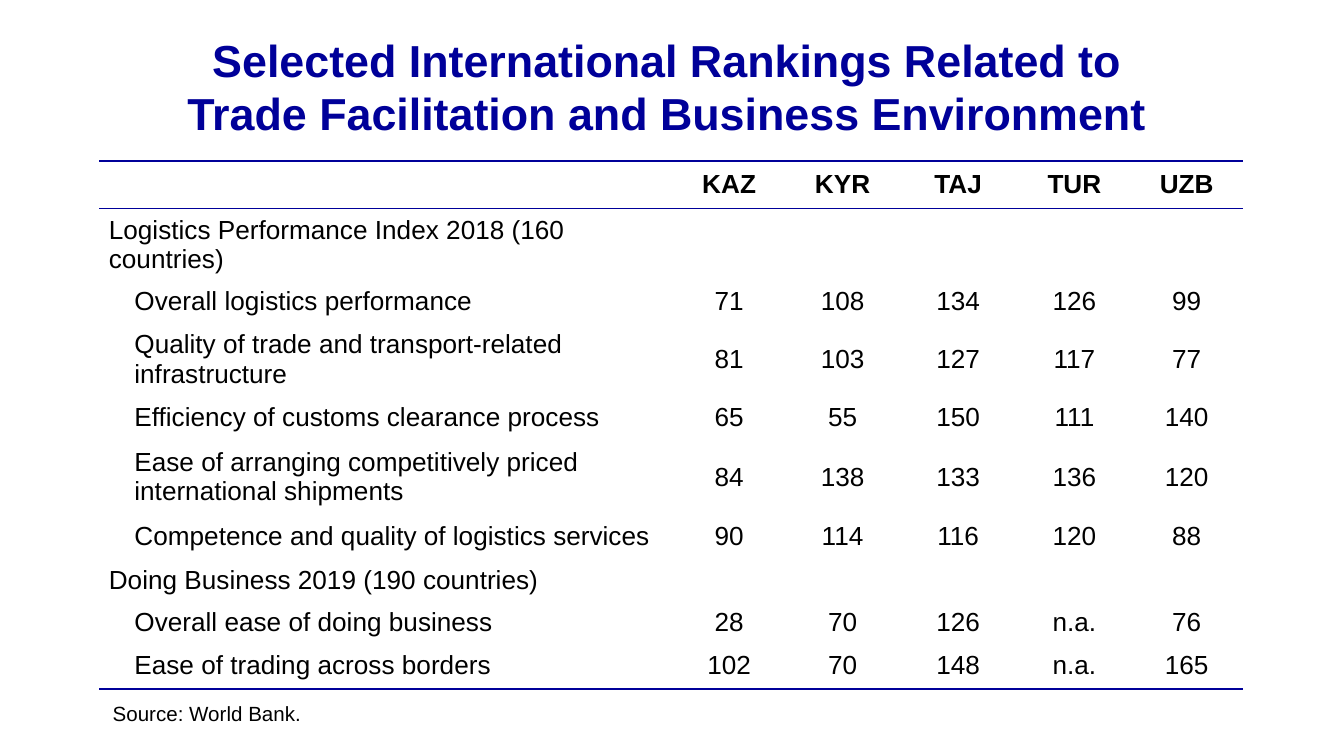
"""Build a slide with a table of international trade and business rankings."""
from lxml import etree
from pptx import Presentation
from pptx.dml.color import RGBColor
from pptx.enum.text import MSO_ANCHOR, PP_ALIGN
from pptx.oxml.ns import qn
from pptx.util import Inches, Pt

LEFT, CENTER = PP_ALIGN.LEFT, PP_ALIGN.CENTER
MIDDLE = MSO_ANCHOR.MIDDLE
NAVY = RGBColor(0x00, 0x00, 0x99)
BLACK = RGBColor(0x00, 0x00, 0x00)
NO_GRID_STYLE = "{2D5ABB26-0587-4C30-8999-92F81FD0307C}"

TITLE_FORMAT = {"name": "Arial", "size": Pt(24), "bold": True}
HEADER_FORMAT = {"name": "Arial", "size": Pt(14), "bold": True}
BODY_FORMAT = {"name": "Arial", "size": Pt(14), "bold": False}
SOURCE_FORMAT = {"name": "Arial", "size": Pt(11), "bold": False}
CELL_FORMAT = {
    "margin_left": Inches(0.07),
    "margin_right": Inches(0.07),
    "margin_top": 0,
    "margin_bottom": 0,
    "vertical_anchor": MIDDLE,
}

TITLE_LINES = [
    "Selected International Rankings Related to",
    "Trade Facilitation and Business Environment",
]
COLUMN_WIDTHS = [4.25, 0.87, 0.82, 0.9, 0.83, 0.84]
RANKINGS = [
    (0.35, "", ["KAZ", "KYR", "TAJ", "TUR", "UZB"]),
    (0.54, "Logistics Performance Index 2018 (160 countries)", [""] * 5),
    (0.3, "Overall logistics performance", [71, 108, 134, 126, 99]),
    (0.57, "Quality of trade and transport-related infrastructure", [81, 103, 127, 117, 77]),
    (0.3, "Efficiency of customs clearance process", [65, 55, 150, 111, 140]),
    (0.58, "Ease of arranging competitively priced international shipments", [84, 138, 133, 136, 120]),
    (0.3, "Competence and quality of logistics services", [90, 114, 116, 120, 88]),
    (0.36, "Doing Business 2019 (190 countries)", [""] * 5),
    (0.27, "Overall ease of doing business", [28, 70, 126, "n.a.", 76]),
    (0.36, "Ease of trading across borders", [102, 70, 148, "n.a.", 165]),
]
RULED_EDGES = {0, 1, len(RANKINGS)}


def write(para, text, values, color, align):
    para.alignment = align
    if text != "":
        span = para.add_run()
        span.text = str(text)
    for font in [para.font, *(run.font for run in para.runs)]:
        for name, value in values.items():
            setattr(font, name, value)
        font.color.rgb = color


def add_border(cell, tag, ruled):
    line = etree.SubElement(cell._tc.get_or_add_tcPr(), qn(tag), w=str(Pt(1)))
    if ruled:
        fill = etree.SubElement(line, qn("a:solidFill"))
        etree.SubElement(fill, qn("a:srgbClr"), val=str(NAVY))
        etree.SubElement(line, qn("a:prstDash"), val="solid")
    else:
        etree.SubElement(line, qn("a:noFill"))


deck = Presentation()
deck.slide_width, deck.slide_height = Inches(10), Inches(10 * 9 / 16)
page = deck.slides.add_slide(deck.slide_layouts[6])

title_box = page.shapes.add_textbox(Inches(0.96), Inches(0.08), Inches(8), Inches(1.12))
title = title_box.text_frame
title.word_wrap = True
title.vertical_anchor = MIDDLE
for index, text in enumerate(TITLE_LINES):
    para = title.add_paragraph() if index else title.paragraphs[0]
    write(para, text, TITLE_FORMAT, NAVY, CENTER)

table = page.shapes.add_table(
    len(RANKINGS), len(COLUMN_WIDTHS), Inches(0.74), Inches(1.2), Inches(8.51), Inches(3.93)
).table
table.first_row = table.horz_banding = False
table._tbl.tblPr.find(qn("a:tableStyleId")).text = NO_GRID_STYLE
for column, width in zip(table.columns, COLUMN_WIDTHS):
    column.width = Inches(width)

for row, (height, label, ranks) in enumerate(RANKINGS):
    table.rows[row].height = Inches(height)
    for column, text in enumerate([label, *ranks]):
        cell = table.cell(row, column)
        for name, value in CELL_FORMAT.items():
            setattr(cell, name, value)
        for tag, edge in (("a:lnL", None), ("a:lnR", None), ("a:lnT", row), ("a:lnB", row + 1)):
            add_border(cell, tag, edge in RULED_EDGES)
        cell.fill.background()
        para = cell.text_frame.paragraphs[0]
        if column == 0 and any(ranks):
            para._p.get_or_add_pPr().set("marL", str(Inches(0.19)))
        values = BODY_FORMAT if row else HEADER_FORMAT
        write(para, text, values, BLACK, CENTER if column else LEFT)

source_box = page.shapes.add_textbox(Inches(0.74), Inches(5.13), Inches(8.23), Inches(0.36))
source = source_box.text_frame
source.word_wrap = True
source.vertical_anchor = MIDDLE
write(source.paragraphs[0], "Source: World Bank.", SOURCE_FORMAT, BLACK, LEFT)

deck.save("out.pptx")
